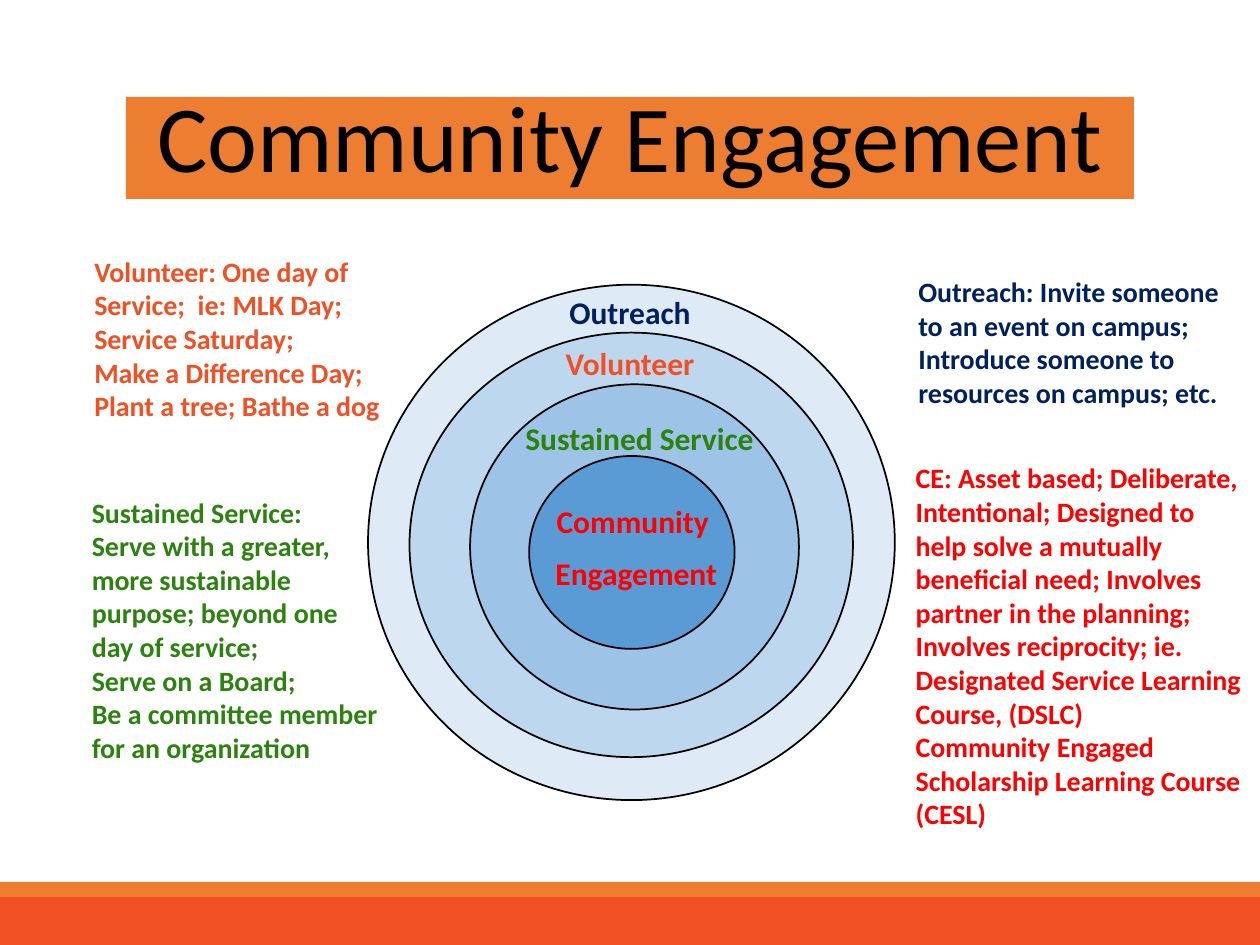
"""Build the Community Engagement slide with nested rings and explanations."""
from typing import NamedTuple

from pptx import Presentation
from pptx.dml.color import RGBColor
from pptx.enum.shapes import MSO_SHAPE as Shape
from pptx.enum.text import MSO_ANCHOR as Anchor, PP_ALIGN as Align
from pptx.util import Pt

FONT = "Calibri"
BLACK, ORANGE, RED_ORANGE = "000000", "ED7D31", "F05023"
NAVY, GREEN, RED = "002060", "2C820E", "FF0000"


class Box(NamedTuple):
    left: float
    top: float
    width: float
    height: float


class Panel(NamedTuple):
    box: Box
    fill: str


class Label(NamedTuple):
    box: Box
    text: str
    color: str
    line_spacing: float


class Note(NamedTuple):
    box: Box
    text: str
    color: str


RINGS = [
    Panel(Box(210.3, 162.7, 301, 294.5), "DEEBF7"),
    Panel(Box(234, 190.1, 253.4, 242.6), "BDD7EE"),
    Panel(Box(268.6, 219.6, 187.9, 185.8), "9DC3E6"),
    Panel(Box(302.4, 260.6, 117.4, 110.2), "5B9BD5"),
]
BANDS = [
    Panel(Box(0, 504, 720, 28), ORANGE),
    Panel(Box(0, 512.6, 720, 27.4), RED_ORANGE),
]
LABELS = [
    Label(Box(295.9, 168.5, 128.2, 23.8), "Outreach", NAVY, 0.8),
    Label(Box(295.9, 198, 128.2, 23.8), "Volunteer", RED_ORANGE, 0.8),
    Label(Box(293.8, 239, 143.3, 23.8), "Sustained Service", GREEN, 0.9),
    Label(Box(276.5, 286.6, 174.2, 130.3), "Community \nEngagement", RED, 0.9),
]
NOTES = [
    Note(Box(517.7, 153.4, 187.9, 85),
         "Outreach: Invite someone to an event on campus; "
         "Introduce someone to resources on campus; etc.", NAVY),
    Note(Box(46.8, 141.8, 180.7, 104.4),
         "Volunteer: One day of Service;  ie: MLK Day;\n"
         "Service Saturday;\n"
         "Make a Difference Day; Plant a tree; Bathe a dog", RED_ORANGE),
    Note(Box(45.4, 279.4, 180, 178.6),
         "Sustained Service:\vServe with a greater, more sustainable "
         "purpose; beyond one day of service;\n"
         "Serve on a Board;\n"
         "Be a committee member for an organization", GREEN),
    Note(Box(516.2, 259.9, 203.8, 220.3),
         "CE: Asset based; Deliberate, Intentional; Designed to help solve "
         "a mutually beneficial need; Involves partner in the planning; "
         "Involves reciprocity; ie.\n"
         "Designated Service Learning Course, (DSLC)\n"
         "Community Engaged Scholarship Learning Course (CESL)", RED),
]


def rgb(color: str) -> RGBColor:
    return RGBColor.from_string(color)


def add_panel(slide, kind: Shape, panel: Panel, outlined: bool = False):
    shape = slide.shapes.add_shape(kind, *map(Pt, panel.box))
    shape.shadow.inherit = False
    shape.fill.solid()
    shape.fill.fore_color.rgb = rgb(panel.fill)
    if outlined:
        shape.line.color.rgb = rgb(BLACK)
        shape.line.width = Pt(1)
    else:
        shape.line.fill.background()
    return shape


def write(text_frame, text: str, size: float, color: str, bold: bool = True) -> None:
    text_frame.word_wrap = True
    text_frame.text = text
    for paragraph in text_frame.paragraphs:
        for run in paragraph.runs:
            run.font.name = FONT
            run.font.size = Pt(size)
            run.font.bold = bold
            run.font.color.rgb = rgb(color)


def add_title(slide) -> None:
    banner = add_panel(slide, Shape.RECTANGLE, Panel(Box(72, 55.4, 576, 58.3), ORANGE))
    text_frame = banner.text_frame
    write(text_frame, "Community Engagement", 54, BLACK, bold=False)
    text_frame.vertical_anchor = Anchor.BOTTOM
    text_frame.paragraphs[0].alignment = Align.CENTER
    text_frame.paragraphs[0].line_spacing = 0.9


def add_label(slide, label: Label) -> None:
    text_frame = slide.shapes.add_textbox(*map(Pt, label.box)).text_frame
    write(text_frame, label.text, 18, label.color)
    text_frame.margin_left = text_frame.margin_right = Pt(5)
    text_frame.margin_top = text_frame.margin_bottom = Pt(2.9)
    for paragraph in text_frame.paragraphs:
        paragraph.alignment = Align.CENTER
        paragraph.line_spacing = label.line_spacing
        paragraph.space_before = Pt(10)


def add_note(slide, note: Note) -> None:
    text_box = slide.shapes.add_textbox(*map(Pt, note.box))
    write(text_box.text_frame, note.text, 16, note.color)


def main() -> None:
    presentation = Presentation()
    presentation.slide_width, presentation.slide_height = Pt(720), Pt(540)
    slide = presentation.slides.add_slide(presentation.slide_layouts[6])
    add_title(slide)
    for ring in RINGS:
        add_panel(slide, Shape.OVAL, ring, outlined=True)
    for label in LABELS:
        add_label(slide, label)
    for note in NOTES:
        add_note(slide, note)
    for band in BANDS:
        add_panel(slide, Shape.RECTANGLE, band)
    presentation.save("out.pptx")


if __name__ == "__main__":
    main()
